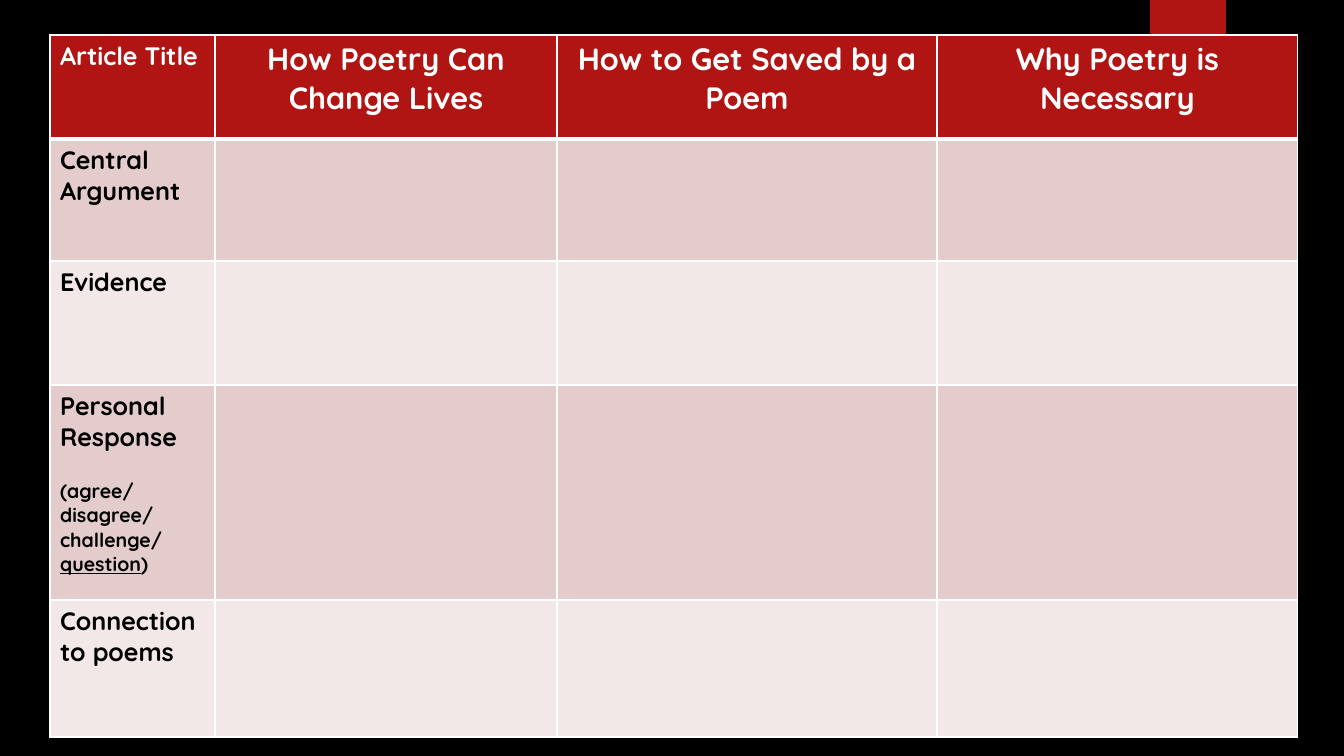
from pptx import Presentation
from pptx import util as u
from pptx.dml.color import RGBColor
from pptx.enum import shapes, text
from pptx.oxml import parse_xml
from pptx.oxml.ns import nsdecls

BLACK = RGBColor(0, 0, 0)
WHITE = RGBColor(255, 255, 255)
RED = RGBColor(0xB0, 0x15, 0x13)
ROSE = RGBColor(0xE4, 0xCC, 0xCC)
PALE = RGBColor(0xF2, 0xE8, 0xE7)
SCALE = 914400 / 100.8
COLS = [165, 342, 380, 361]
ROWS = [104, 122, 124, 215, 137]
TITLES = ["Article Title", "How Poetry Can Change Lives",
          "How to Get Saved by a Poem", "Why Poetry is Necessary"]
LABELS = ["Central Argument", "Evidence", "Personal Response",
          "Connection to poems"]
HINTS = [["(agree/"], ["disagree/"], ["challenge/"], ["question", ")"]]


def px(n):
    return u.Emu(round(n * SCALE))


def style(item, **form):
    for key, val in form.items():
        setattr(item, key, val)


def write(para, words, size, color):
    for word in words:
        run = para.add_run()
        run.text = word
        style(run.font, name="Quicksand", size=u.Pt(size), bold=True,
              underline=word == "question")
        run.font.color.rgb = color


def border(cell, row):
    widths = {"L": 1, "R": 1, "T": 3 if row == 1 else 1,
              "B": 3 if row == 0 else 1}
    props = cell._tc.get_or_add_tcPr()
    for spot, (side, width) in enumerate(widths.items()):
        props.insert(spot, parse_xml(
            f'<a:ln{side} {nsdecls("a")} w="{u.Pt(width)}"><a:solidFill>'
            f'<a:srgbClr val="{WHITE}"/></a:solidFill></a:ln{side}>'))


def tab(slide, left, top, width, height):
    flag = slide.shapes.add_shape(shapes.MSO_SHAPE.RECTANGLE,
                                  *map(px, (left, top, width, height)))
    flag.shadow.inherit = False
    flag.fill.solid()
    flag.fill.fore_color.rgb = RED
    flag.line.fill.background()


def chart(slide, left, top, cols, rows):
    grid = slide.shapes.add_table(
        len(rows), len(cols),
        *map(px, (left, top, sum(cols), sum(rows)))).table
    for col, width in zip(grid.columns, cols):
        col.width = px(width)
    for row, height in enumerate(rows):
        grid.rows[row].height = px(height)
        for cell in grid.rows[row].cells:
            cell.fill.solid()
            cell.fill.fore_color.rgb = (
                RED if row == 0 else ROSE if row % 2 else PALE)
            border(cell, row)
    for col, title in enumerate(TITLES):
        para = grid.cell(0, col).text_frame.paragraphs[0]
        if col:
            para.alignment = text.PP_ALIGN.CENTER
        write(para, [title], 22 if col else 18, WHITE)
    for row, label in enumerate(LABELS, 1):
        frame = grid.cell(row, 0).text_frame
        write(frame.paragraphs[0], [label], 18, BLACK)
        if label == "Personal Response":
            for spot, words in enumerate(HINTS):
                para = frame.add_paragraph()
                if spot == 0:
                    para.space_before = u.Pt(18)
                write(para, words, 14, BLACK)


def main():
    deck = Presentation()
    style(deck, slide_width=px(1344), slide_height=px(756))
    slide = deck.slides.add_slide(deck.slide_layouts[6])
    slide.background.fill.solid()
    slide.background.fill.fore_color.rgb = BLACK
    tab(slide, 1150, 0, 76, 126)
    chart(slide, 50, 35, COLS, ROWS)
    deck.save("out.pptx")


if __name__ == "__main__":
    main()
